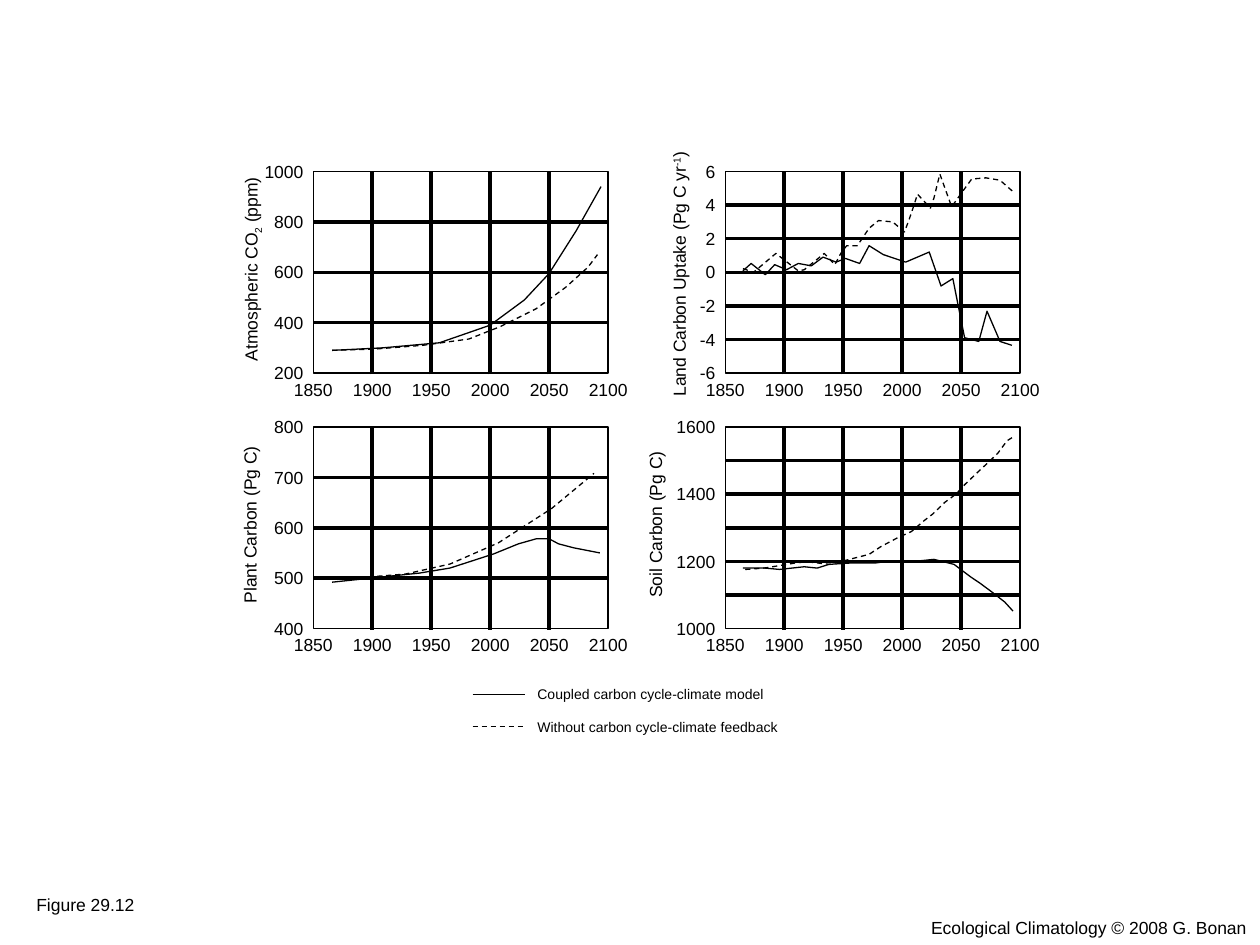
import pptx
import pptx.util
import pptx.dml.color
import pptx.enum.dml
import pptx.enum.shapes
import pptx.enum.text
import pptx.oxml.ns
import lxml.etree
from dataclasses import dataclass

Pt = pptx.util.Pt
Align = pptx.enum.text.PP_ALIGN
BLACK = pptx.dml.color.RGBColor(0, 0, 0)
FONT = "Arial"
FIRST_YEAR, LAST_YEAR, YEAR_STEP = 1850, 2100, 50
PLOT_WIDTH, PLOT_HEIGHT = 168.5, 115.2
LABEL_WIDTH, LABEL_HEIGHT = 36.7, 19.4
CURVE_WIDTH, GRID_WIDTH = 0.75, 0


@dataclass
class Panel:
    title: list
    title_center: tuple
    low: int
    high: int
    grid_step: int
    label_step: int
    coupled: list
    uncoupled: list


CO2 = Panel(
    [("Atmospheric CO", 0), ("2", -25000), (" (ppm)", 0)], (-35.6, 55.8), 200, 1000, 200, 200,
    [(1866, 290), (1909, 300), (1957, 320), (2000, 390), (2029, 490), (2050, 595),
     (2073, 765), (2094, 940)],
    [(1866, 290), (1902, 295), (1943, 310), (1982, 335), (2009, 385), (2039, 455),
     (2064, 540), (2083, 620), (2091, 670)])

LAND_UPTAKE = Panel(
    [("Land Carbon Uptake (Pg C yr", 0), ("-1", 30000), (")", 0)], (-26.3, 58.7), -6, 6, 2, 2,
    [(1865, 0.08), (1872, 0.52), (1884, -0.15), (1892, 0.45), (1902, 0.15), (1912, 0.52),
     (1923, 0.38), (1933, 0.9), (1944, 0.6), (1952, 0.82), (1964, 0.52), (1972, 1.58),
     (1984, 1.05), (2003, 0.6), (2023, 1.2), (2033, -0.82), (2043, -0.38), (2053, -3.9),
     (2065, -4.12), (2072, -2.32), (2083, -4.12), (2093, -4.35)],
    [(1865, 0.22), (1874, 0), (1893, 1.12), (1912, 0.08), (1917, 0.15), (1934, 1.12),
     (1943, 0.45), (1948, 1.12), (1953, 1.58), (1962, 1.58), (1972, 2.62), (1980, 3.08),
     (1992, 3), (2002, 2.4), (2006, 3.15), (2010, 3.98), (2013, 4.65), (2024, 3.82),
     (2027, 4.42), (2032, 5.85), (2042, 3.9), (2052, 4.88), (2059, 5.55), (2071, 5.62),
     (2083, 5.48), (2094, 4.8)])

PLANT_CARBON = Panel(
    [("Plant Carbon (Pg C)", 0)], (-36.2, 55.8), 400, 800, 100, 100,
    [(1866, 492), (1899, 500), (1940, 510), (1966, 520), (2003, 548), (2024, 568),
     (2039, 578), (2050, 578), (2058, 568), (2071, 560), (2093, 550)],
    [(1866, 500), (1895, 502), (1928, 508), (1966, 528), (2007, 570), (2052, 638),
     (2088, 708)])

SOIL_CARBON = Panel(
    [("Soil Carbon (Pg C)", 0)], (-39.8, 55.8), 1000, 1600, 100, 200,
    [(1865, 1180), (1884, 1180), (1896, 1176), (1917, 1184), (1928, 1180), (1938, 1191),
     (1956, 1195), (1977, 1195), (1992, 1202), (2016, 1202), (2027, 1206), (2044, 1191),
     (2058, 1154), (2066, 1135), (2076, 1109), (2087, 1079), (2094, 1052)],
    [(1867, 1176), (1883, 1180), (1897, 1188), (1909, 1195), (1919, 1199), (1939, 1191),
     (1951, 1202), (1972, 1221), (1982, 1244), (1996, 1270), (2008, 1289), (2019, 1322),
     (2026, 1341), (2036, 1375), (2046, 1401), (2053, 1428), (2064, 1465), (2072, 1491),
     (2081, 1521), (2089, 1559), (2094, 1570)])


def style_line(line, width, dashed=False):
    line.color.rgb = BLACK
    line.width = Pt(width)
    if dashed:
        line.dash_style = pptx.enum.dml.MSO_LINE.DASH


def add_text(slide, box, paragraphs, size=10, alignment=Align.LEFT, gap=0):
    shape = slide.shapes.add_textbox(*(Pt(length) for length in box))
    frame = shape.text_frame
    frame.word_wrap = False
    for index, runs in enumerate(paragraphs):
        paragraph = frame.add_paragraph() if index else frame.paragraphs[0]
        paragraph.alignment = alignment
        paragraph.space_before = Pt(gap if index else 0)
        paragraph.font.name = FONT
        paragraph.font.size = Pt(size)
        paragraph.font.color.rgb = BLACK
        for text, baseline in runs:
            run = paragraph.add_run()
            run.text = text
            if baseline:
                run._r.get_or_add_rPr().set("baseline", str(baseline))
    return shape


def add_line(slide, start, end, width, dashed=False):
    connector = slide.shapes.add_connector(
        pptx.enum.shapes.MSO_CONNECTOR.STRAIGHT, *(Pt(length) for length in start + end))
    style_line(connector.line, width, dashed)
    lxml.etree.SubElement(connector._element.spPr, pptx.oxml.ns.qn("a:effectLst"))
    return connector


def add_curve(slide, points, dashed):
    vertices = [(Pt(x), Pt(y)) for x, y in points]
    builder = slide.shapes.build_freeform(*vertices[0])
    builder.add_line_segments(vertices[1:], close=False)
    shape = builder.convert_to_shape()
    shape.shadow.inherit = False
    shape.fill.background()
    style_line(shape.line, CURVE_WIDTH, dashed)


def add_panel(slide, panel, left, top, width, height):
    right, bottom = left + width, top + height

    def year_x(year):
        return left + width * (year - FIRST_YEAR) / (LAST_YEAR - FIRST_YEAR)

    def value_y(value):
        return bottom - height * (value - panel.low) / (panel.high - panel.low)

    frame = slide.shapes.add_shape(
        pptx.enum.shapes.MSO_SHAPE.RECTANGLE, Pt(left), Pt(top), Pt(width), Pt(height))
    frame.shadow.inherit = False
    frame.fill.background()
    style_line(frame.line, CURVE_WIDTH)

    for year in range(FIRST_YEAR + YEAR_STEP, LAST_YEAR, YEAR_STEP):
        add_line(slide, (year_x(year), bottom + 0.7), (year_x(year), top), GRID_WIDTH)
    for value in range(panel.low + panel.grid_step, panel.high, panel.grid_step):
        line = add_line(slide, (left, value_y(value)), (right, value_y(value)), GRID_WIDTH)
        if value * 2 == panel.low + panel.high:
            line.begin_connect(frame, 1)
            line.end_connect(frame, 3)

    for series, dashed in ((panel.coupled, False), (panel.uncoupled, True)):
        add_curve(slide, [(year_x(year), value_y(value)) for year, value in series], dashed)

    for year in range(FIRST_YEAR, LAST_YEAR + 1, YEAR_STEP):
        box = (year_x(year) - LABEL_WIDTH / 2, bottom - 0.4, LABEL_WIDTH, LABEL_HEIGHT)
        add_text(slide, box, [[(str(year), 0)]], alignment=Align.CENTER)
    for value in range(panel.low, panel.high + 1, panel.label_step):
        box = (left + 1.4 - LABEL_WIDTH, value_y(value) - LABEL_HEIGHT / 2,
               LABEL_WIDTH, LABEL_HEIGHT)
        add_text(slide, box, [[(str(value), 0)]], alignment=Align.RIGHT)

    center_x, center_y = left + panel.title_center[0], top + panel.title_center[1]
    title_width = 155
    box = (center_x - title_width / 2, center_y - LABEL_HEIGHT / 2, title_width, LABEL_HEIGHT)
    add_text(slide, box, [panel.title], alignment=Align.CENTER).rotation = 270


def add_legend(slide, left, top, width, height):
    key_width = 30
    names = ["Coupled carbon cycle-climate model", "Without carbon cycle-climate feedback"]
    add_text(slide, (left + key_width, top, width - key_width, height),
             [[(name, 0)] for name in names], size=8, gap=9.2)
    for y, dashed in ((top + 8.6, False), (top + 26.9, True)):
        add_line(slide, (left, y), (left + key_width, y), CURVE_WIDTH, dashed)


def add_captions(slide):
    add_text(slide, (13.7, 507.6, 70.6, LABEL_HEIGHT), [[("Figure 29.12", 0)]])
    add_text(slide, (524.2, 520.6, 195.8, LABEL_HEIGHT),
             [[("Ecological Climatology © 2008 G. Bonan", 0)]], alignment=Align.CENTER)


def main():
    presentation = pptx.Presentation()
    presentation.slide_width, presentation.slide_height = Pt(720), Pt(540)
    slide = presentation.slides.add_slide(presentation.slide_layouts[6])
    rows = ((98, (CO2, LAND_UPTAKE)), (244, (PLANT_CARBON, SOIL_CARBON)))
    for top, panels in rows:
        for left, panel in zip((179, 414.4), panels):
            add_panel(slide, panel, left, top, PLOT_WIDTH, PLOT_HEIGHT)
    add_legend(slide, 270, 388.1, 182, 36)
    add_captions(slide)
    presentation.save("out.pptx")


if __name__ == "__main__":
    main()
